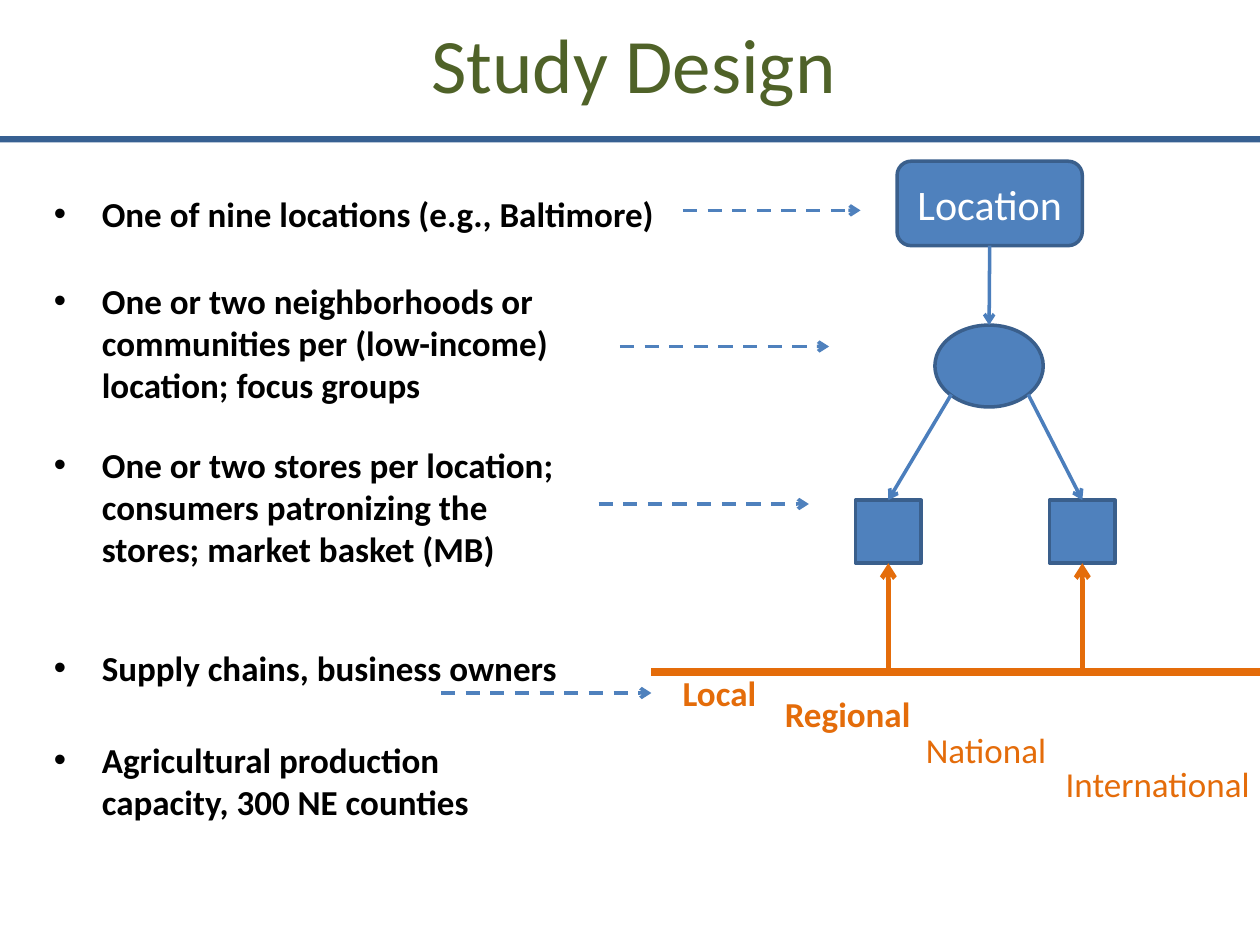
"""Build the Study Design slide with its bullet list and sampling diagram."""
from typing import NamedTuple, Optional

from lxml import etree
from pptx import Presentation
from pptx.dml.color import RGBColor
from pptx.enum.dml import MSO_LINE
from pptx.enum.shapes import MSO_CONNECTOR, MSO_SHAPE
from pptx.enum.text import MSO_ANCHOR, MSO_AUTO_SIZE, PP_ALIGN
from pptx.oxml.ns import qn
from pptx.util import Inches, Pt

STRAIGHT = MSO_CONNECTOR.STRAIGHT
DASH = MSO_LINE.DASH
RECTANGLE, ROUNDED, OVAL = MSO_SHAPE.RECTANGLE, MSO_SHAPE.ROUNDED_RECTANGLE, MSO_SHAPE.OVAL
CENTER, LEFT = PP_ALIGN.CENTER, PP_ALIGN.LEFT
MIDDLE = MSO_ANCHOR.MIDDLE
FIT_SHAPE = MSO_AUTO_SIZE.SHAPE_TO_FIT_TEXT
TOP_SIDE, BOTTOM_SIDE = 0, 2

BLACK = RGBColor(0x00, 0x00, 0x00)
WHITE = RGBColor(0xFF, 0xFF, 0xFF)
GREEN = RGBColor(0x4F, 0x62, 0x28)
ORANGE = RGBColor(0xE4, 0x6C, 0x0A)
BLUE = RGBColor(0x4F, 0x81, 0xBD)
ARROW_BLUE = RGBColor(0x4B, 0x7E, 0xBC)
OUTLINE_BLUE = RGBColor(0x3A, 0x5F, 0x8C)
RULE_BLUE = RGBColor(0x37, 0x60, 0x92)


class Label(NamedTuple):
    """A text box with one paragraph."""
    text: str
    left: float
    top: float
    width: float
    height: float = 0.44
    wrap: bool = True
    bold: bool = True
    color: RGBColor = BLACK
    bullet: bool = False


class Node(NamedTuple):
    """A filled preset shape."""
    kind: int
    left: float
    top: float
    width: float
    height: float
    fill: RGBColor = BLUE
    outline: Optional[RGBColor] = OUTLINE_BLUE


class Line(NamedTuple):
    """A straight line, usually with an arrowhead at its end."""
    start: tuple
    end: tuple
    color: RGBColor = ARROW_BLUE
    width: float = 2
    arrow: bool = True
    dashed: bool = False


BULLETS = [
    Label("One of nine locations (e.g., Baltimore)", 0.33, 1.48, 5, wrap=False, bullet=True),
    Label("One or two neighborhoods or communities per (low-income) location; focus groups",
          0.33, 2.17, 4.25, 1.11, bullet=True),
    Label("One or two stores per location; consumers patronizing the stores; market basket (MB)",
          0.33, 3.47, 4.25, 1.11, bullet=True),
    Label("Supply chains, business owners", 0.33, 5.08, 4.23, wrap=False, bullet=True),
    Label("Agricultural production \ncapacity, 300 NE counties", 0.33, 5.81, 4.58, 0.77,
          bullet=True),
]
SUPPLY_LEVELS = [
    Label("Local", 5.32, 5.28, 0.82, wrap=False, color=ORANGE),
    Label("Regional", 6.13, 5.45, 1.25, wrap=False, color=ORANGE),
    Label("National", 7.25, 5.73, 1.24, bold=False, color=ORANGE),
    Label("International", 8.36, 6, 1.73, bold=False, color=ORANGE),
]
STORE_BRANCHES = [(6.79, 7.55), (8.33, 8.16)]
POINTERS = [(5.42, 6.83, 1.67), (4.92, 6.58, 2.75), (4.75, 6.42, 4), (3.5, 5.17, 5.5)]


def write_text(frame, text: str, alignment=LEFT, bullet: bool = False, **font_values):
    """Fill the first paragraph of a text frame and format its runs."""
    paragraph = frame.paragraphs[0]
    paragraph.text = text
    paragraph.alignment = alignment
    if bullet:
        properties = paragraph._p.get_or_add_pPr()
        properties.set("marL", str(Inches(0.38)))
        properties.set("indent", str(Inches(-0.38)))
        etree.SubElement(properties, qn("a:buFont")).set("typeface", "Arial")
        etree.SubElement(properties, qn("a:buChar")).set("char", "•")
    color = font_values.pop("color")
    for run in paragraph.runs:
        for name, value in {"name": "Calibri", **font_values}.items():
            setattr(run.font, name, value)
        run.font.color.rgb = color


def add_label(slide, label: Label):
    """Add a text box."""
    box = slide.shapes.add_textbox(*map(Inches, label[1:5]))
    box.text_frame.word_wrap = label.wrap
    box.text_frame.auto_size = FIT_SHAPE
    write_text(box.text_frame, label.text, bullet=label.bullet,
               size=Pt(20), bold=label.bold, color=label.color)


def add_node(slide, node: Node):
    """Add a filled shape and return it."""
    shape = slide.shapes.add_shape(node.kind, *map(Inches, node[1:5]))
    shape.shadow.inherit = False
    shape.fill.solid()
    shape.fill.fore_color.rgb = node.fill
    if node.outline is None:
        shape.line.fill.background()
    else:
        shape.line.color.rgb = node.outline
        shape.line.width = Pt(2)
    return shape


def add_line(slide, line: Line):
    """Add a straight connector and return it."""
    connector = slide.shapes.add_connector(STRAIGHT, *map(Inches, line.start + line.end))
    connector.line.color.rgb = line.color
    connector.line.width = Pt(line.width)
    if line.dashed:
        connector.line.dash_style = DASH
    if line.arrow:
        etree.SubElement(connector.line._get_or_add_ln(), qn("a:tailEnd")).set("type", "arrow")
    etree.SubElement(connector._element.spPr, qn("a:effectLst"))
    return connector


def add_title(slide):
    """Place and format the title, with the rule below it."""
    title = slide.shapes.title
    position = {"left": 0.03, "top": -0.25, "width": 10, "height": 1.5}
    for name, value in position.items():
        setattr(title, name, Inches(value))
    title.text_frame.vertical_anchor = MIDDLE
    write_text(title.text_frame, "Study Design", CENTER, size=Pt(44), color=GREEN)
    add_node(slide, Node(RECTANGLE, 0, 1.08, 10, 0.05, RULE_BLUE, None))


def add_diagram(slide):
    """Draw the location, community, stores and supply chain."""
    location = add_node(slide, Node(ROUNDED, 7.12, 1.28, 1.47, 0.67))
    location.text_frame.vertical_anchor = MIDDLE
    write_text(location.text_frame, "Location", CENTER, size=Pt(24), color=WHITE)
    community = add_node(slide, Node(OVAL, 7.42, 2.58, 0.86, 0.65))
    link = add_line(slide, Line((7.86, 1.95), (7.85, 2.58)))
    link.begin_connect(location, BOTTOM_SIDE)
    link.end_connect(community, TOP_SIDE)
    add_line(slide, Line((10, 5.33), (5.17, 5.33), ORANGE, 4.5, arrow=False))
    for left, branch_x in STORE_BRANCHES:
        store = add_node(slide, Node(RECTANGLE, left, 3.97, 0.52, 0.5))
        middle = left + 0.26
        supply = add_line(slide, Line((middle, 5.31), (middle, 4.47), ORANGE, 2.75))
        supply.end_connect(store, BOTTOM_SIDE)
        branch = add_line(slide, Line((branch_x, 3.13), (middle, 3.97)))
        branch.end_connect(store, TOP_SIDE)


def main():
    """Create and save the presentation."""
    presentation = Presentation()
    presentation.slide_width, presentation.slide_height = Inches(10), Inches(7.5)
    slide = presentation.slides.add_slide(presentation.slide_layouts[5])
    add_title(slide)
    add_diagram(slide)
    for label in BULLETS + SUPPLY_LEVELS:
        add_label(slide, label)
    for start, end, y in POINTERS:
        add_line(slide, Line((start, y), (end, y), BLUE, dashed=True))
    presentation.save("out.pptx")


if __name__ == "__main__":
    main()
